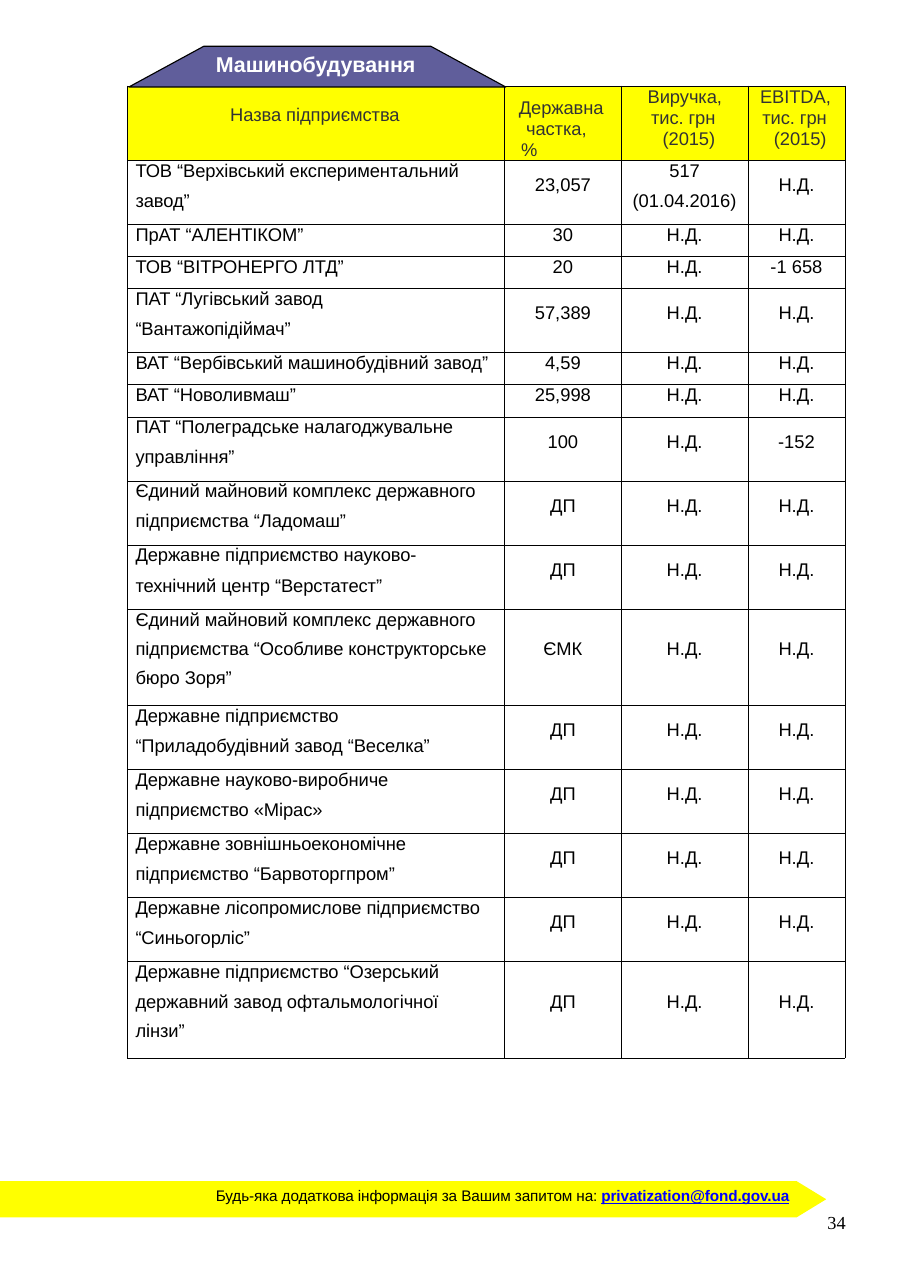
from pptx import Presentation
from pptx.dml.color import RGBColor
from pptx.enum.text import MSO_ANCHOR, PP_ALIGN
from pptx.util import Inches, Pt
from pptx.oxml import parse_xml
from pptx.oxml.ns import nsdecls

COLORS = {
    "yellow": "FFFF00", "violet": "605E9B", "black": "000000",
    "white": "FFFFFF", "grey": "333333", "link": "0000FF",
}
COLUMN_WIDTHS = [3.42, 1.06, 1.15, 0.88]
HEADER_HEIGHT, BODY_HEIGHT = 0.67, 8.15
CENTER = PP_ALIGN.CENTER
ND = "Н.Д."

# Header cells: top margin, then (text, left margin, first-line indent) per paragraph
HEADERS = [
    (0.17, [("Назва підприємства", 0.93, 0)]),
    (0.1, [("Державна\v частка,\v%", 0.15, -0.02)]),
    (0, [("Виручка,", 0.28, -0.04), ("тис. грн\v (2015)", 0.33, -0.06)]),
    (0, [("EBITDA,", 0.11, 0), ("тис. грн\v (2015)", 0.19, -0.06)]),
]

# Lines in the name, name, state share, revenue, EBITDA
COMPANIES = [
    (2, "ТОВ “Верхівський експериментальний\nзавод”", "23,057", "517\n(01.04.2016)", ND),
    (1, "ПрАТ “АЛЕНТІКОМ”", "30", ND, ND),
    (1, "ТОВ “ВІТРОНЕРГО ЛТД”", "20", ND, "-1 658"),
    (2, "ПАТ “Лугівський завод\n“Вантажопідіймач”", "57,389", ND, ND),
    (1, "ВАТ “Вербівський машинобудівний завод”", "4,59", ND, ND),
    (1, "ВАТ “Новоливмаш”", "25,998", ND, ND),
    (2, "ПАТ “Полеградське налагоджувальне\nуправління”", "100", ND, "-152"),
    (2, "Єдиний майновий комплекс державного\nпідприємства “Ладомаш”", "ДП", ND, ND),
    (2, "Державне підприємство науково-\nтехнічний центр “Верстатест”", "ДП", ND, ND),
    (3, "Єдиний майновий комплекс державного\n"
        "підприємства “Особливе конструкторське бюро Зоря”", "ЄМК", ND, ND),
    (2, "Державне підприємство\n“Приладобудівний завод “Веселка”", "ДП", ND, ND),
    (2, "Державне науково-виробниче\nпідприємство «Мірас»", "ДП", ND, ND),
    (2, "Державне зовнішньоекономічне\nпідприємство “Барвоторгпром”", "ДП", ND, ND),
    (2, "Державне лісопромислове підприємство\n“Синьогорліс”", "ДП", ND, ND),
    (3, "Державне підприємство “Озерський\n"
        "державний завод офтальмологічної\vлінзи”", "ДП", ND, ND),
]
VALUE_TOP = {1: 0, 2: 0.13, 3: 0.27}


def color(name):
    return RGBColor.from_string(COLORS[name])


def set_font(font, size, name="black", face="Arial", bold=False):
    font.size, font.name, font.bold = Pt(size), face, bold
    font.color.rgb = color(name)


def tighten(paragraph):
    for run in paragraph.runs:
        run._r.get_or_add_rPr().set("spc", "-5")


def set_indent(paragraph, left, first=0):
    properties = paragraph._p.get_or_add_pPr()
    properties.set("marL", str(Inches(left)))
    properties.set("indent", str(Inches(first)))


def add_text(slide, left, top, width, height):
    frame = slide.shapes.add_textbox(
        Inches(left), Inches(top), Inches(width), Inches(height)).text_frame
    frame.word_wrap = True
    frame.margin_left = frame.margin_right = frame.margin_top = frame.margin_bottom = 0
    return frame.paragraphs[0]


def add_outline(slide, points, fill, line=None):
    corners = [(Inches(x), Inches(y)) for x, y in points]
    builder = slide.shapes.build_freeform(*corners[0])
    builder.add_line_segments(corners[1:], close=True)
    shape = builder.convert_to_shape()
    shape.shadow.inherit = False
    shape.fill.solid()
    shape.fill.fore_color.rgb = color(fill)
    if line:
        shape.line.color.rgb = color(line)
        shape.line.width = Pt(0.75)
    else:
        shape.line.fill.background()


def style_cell(cell, top, fill=None):
    cell.margin_left = cell.margin_right = cell.margin_bottom = 0
    cell.margin_top = Inches(top)
    cell.vertical_anchor = MSO_ANCHOR.TOP
    properties = cell._tc.get_or_add_tcPr()
    for side in ("lnL", "lnR", "lnT", "lnB"):
        properties.append(parse_xml(
            f'<a:{side} {nsdecls("a")} w="{Pt(0.48)}"><a:solidFill>'
            f'<a:srgbClr val="{COLORS["black"]}"/></a:solidFill></a:{side}>'))
    if fill:
        cell.fill.solid()
        cell.fill.fore_color.rgb = color(fill)
    else:
        cell.fill.background()


def fill_header(cell, top, lines):
    style_cell(cell, top, "yellow")
    cell.text = "\n".join(text for text, _, _ in lines)
    for paragraph, (_, left, first) in zip(cell.text_frame.paragraphs, lines):
        set_font(paragraph.font, 12, "grey")
        tighten(paragraph)
        set_indent(paragraph, left, first)
        paragraph.line_spacing = Pt(13.8)


def fill_body(cell, text, line_count, is_name):
    stacked = is_name or "\n" in text
    style_cell(cell, 0 if stacked else VALUE_TOP[line_count])
    cell.text = text
    for index, paragraph in enumerate(cell.text_frame.paragraphs):
        set_font(paragraph.font, 12)
        if is_name:
            set_indent(paragraph, 0.07)
            tighten(paragraph)
        else:
            paragraph.alignment = CENTER
        if index == 0:
            paragraph.line_spacing = Pt(13.6)
        elif line_count == 3:
            paragraph.line_spacing = 1.43
        else:
            paragraph.space_before = Pt(6.2)


def add_company_table(slide, left, top):
    table = slide.shapes.add_table(
        len(COMPANIES) + 1, len(COLUMN_WIDTHS), Inches(left), Inches(top),
        Inches(sum(COLUMN_WIDTHS)), Inches(HEADER_HEIGHT + BODY_HEIGHT)).table
    table.first_row = table.horz_banding = False
    for column, width in zip(table.columns, COLUMN_WIDTHS):
        column.width = Inches(width)
    table.rows[0].height = Inches(HEADER_HEIGHT)
    for index, (margin, lines) in enumerate(HEADERS):
        fill_header(table.cell(0, index), margin, lines)
    line_height = BODY_HEIGHT / sum(company[0] for company in COMPANIES)
    for row, (line_count, *texts) in enumerate(COMPANIES, 1):
        table.rows[row].height = Inches(line_height * line_count)
        for index, text in enumerate(texts):
            fill_body(table.cell(row, index), text, line_count, index == 0)


def add_title_tab(slide, left, top, width, height):
    right, bottom, slant = left + width, top + height, 0.68
    add_outline(slide, [(left, bottom), (left + slant, top),
                        (right - slant, top), (right, bottom)], "violet", "black")
    paragraph = add_text(slide, left + 0.79, top + 0.04, 2, 0.25)
    paragraph.text = "Машинобудування"
    set_font(paragraph.font, 14, "white", bold=True)
    tighten(paragraph)


def add_footer(slide, left, top, width, height):
    # Pointed band
    right, bottom, tip = left + width, top + height, 0.27
    add_outline(slide, [(left, top), (right - tip, top), (right, top + height / 2),
                        (right - tip, bottom), (left, bottom)], "yellow")
    # Contact line
    paragraph = add_text(slide, left + 1.96, top + 0.05, 5.33, 0.18)
    set_font(paragraph.font, 10)
    paragraph.add_run().text = "Будь-яка додаткова інформація за Вашим запитом на: "
    address = paragraph.add_run()
    address.text = "privatization@fond.gov.ua"
    set_font(address.font, 10, "link", bold=True)
    address.font.underline = True
    tighten(paragraph)
    # Page number
    paragraph = add_text(slide, right + 0.01, top + 0.28, 0.22, 0.21)
    paragraph.text = "34"
    set_font(paragraph.font, 12, face="Times New Roman")
    paragraph.line_spacing = Pt(14.1)


def main():
    presentation = Presentation()
    presentation.slide_width, presentation.slide_height = Inches(8.26), Inches(11.69)
    slide = presentation.slides.add_slide(presentation.slide_layouts[6])
    add_footer(slide, 0, 10.72, 7.5, 0.33)
    add_company_table(slide, 1.16, 0.78)
    add_title_tab(slide, 1.17, 0.42, 3.42, 0.37)
    presentation.save("out.pptx")


if __name__ == "__main__":
    main()
